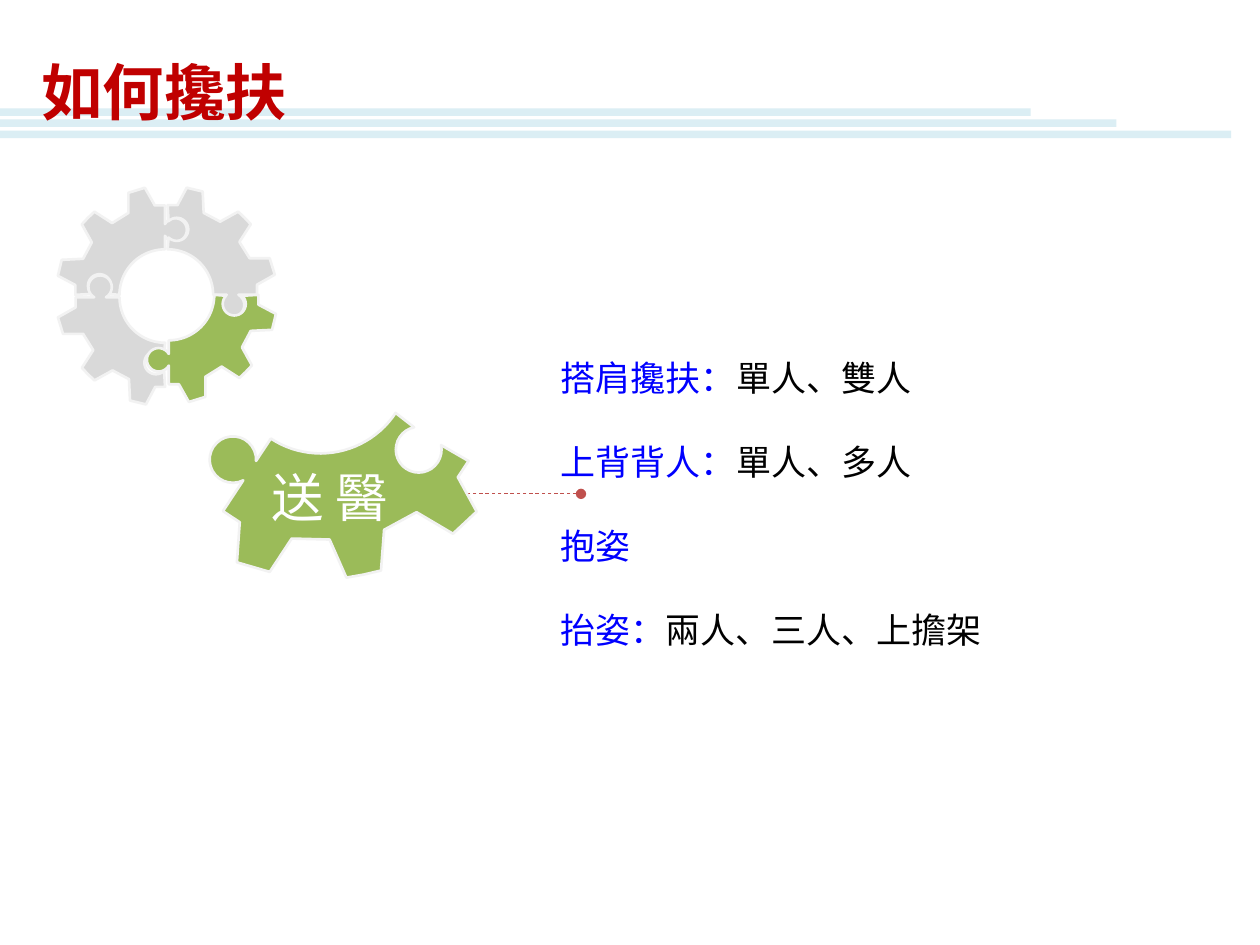
from math import cos, sin, radians
from lxml.etree import SubElement
from pptx import Presentation
from pptx.dml.color import RGBColor
from pptx.enum.dml import MSO_LINE
from pptx.enum.shapes import MSO_CONNECTOR, MSO_SHAPE
from pptx.enum.text import MSO_ANCHOR, MSO_AUTO_SIZE, PP_ALIGN
from pptx.oxml.ns import qn
from pptx.util import Pt

FONT = "Noto Sans CJK SC"
COLORS = {name: RGBColor.from_string(value) for name, value in {
    "gray": "D9D9D9", "green": "9BBB59", "edge": "F2F2F2", "bar": "DBEEF4",
    "link": "C0504D", "title": "C00000", "term": "0000FF", "text": "000000",
    "label": "FFFFFF",
}.items()}

prs = Presentation()
prs.slide_width, prs.slide_height = Pt(720), Pt(540)
s = prs.slides.add_slide(prs.slide_layouts[1])


def arc(cx, cy, radius, start, end, steps=24):
    angles = [radians(start + (end - start) * i / steps) for i in range(steps + 1)]
    return [(cx + radius * cos(a), cy + radius * sin(a)) for a in angles]


def write(sp, box, paragraphs, size, bold=False, align=PP_ALIGN.LEFT, inset=(0, 0), gap=0):
    """Fill a text shape; each paragraph is a list of (text, color name)."""
    sp.left, sp.top, sp.width, sp.height = (Pt(v) for v in box)
    tf = sp.text_frame
    tf.word_wrap, tf.auto_size = True, MSO_AUTO_SIZE.NONE
    tf.vertical_anchor = MSO_ANCHOR.TOP
    tf.margin_left = tf.margin_right = Pt(inset[0])
    tf.margin_top = tf.margin_bottom = Pt(inset[1])
    for i, parts in enumerate(paragraphs):
        p = tf.paragraphs[0] if i == 0 else tf.add_paragraph()
        p.alignment, p.line_spacing = align, Pt(size * 1.3)
        p.space_before, p.space_after = Pt(0), Pt(gap)
        pPr = p._p.get_or_add_pPr()
        pPr.set("marL", "0")
        pPr.set("indent", "0")
        SubElement(pPr, qn("a:buNone"))
        for text, color in parts:
            r = p.add_run()
            r.text = text
            r.font.size, r.font.bold, r.font.name = Pt(size), bold, FONT
            r.font.color.rgb = COLORS[color]
            SubElement(r._r.get_or_add_rPr(), qn("a:ea")).set("typeface", FONT)


# Outline of a gear quarter around the gear centre: hub, socket, teeth, knob
quarter = (
    arc(0, 0, 26, 90, 0)
    + arc(37.4, 5.2, 6.6, 225, -45)
    + [(51.2, 0), (51.2, 5.6), (61.2, 10.9), (59, 20), (46.8, 20.6), (41.8, 30),
       (47.5, 40.3), (44, 44), (40.3, 47.5), (30.2, 41), (20.9, 46.8),
       (20.9, 58.3), (11.5, 61.2), (5.8, 51.1), (0, 51.1)]
    + arc(-5.8, 37.1, 6.7, 30, 330)
)

# Link from the large piece to the list
link = s.shapes.add_connector(MSO_CONNECTOR.STRAIGHT, Pt(332), Pt(282.2), Pt(208), Pt(282.2))
link.line.color.rgb, link.line.width = COLORS["link"], Pt(0.5)
link.line.dash_style = MSO_LINE.DASH
SubElement(link.line._get_or_add_ln(), qn("a:headEnd")).set("type", "oval")
SubElement(link._element.spPr, qn("a:effectLst"))

# Small gear in four quarter turns, then the enlarged piece
for x, y, turns, scale, rotation, color in [
    (94.3, 168.5, 2, 1, 0, "gray"),
    (95.8, 168.5, 3, 1, 0, "gray"),
    (94.3, 169.9, 1, 1, 0, "gray"),
    (96.5, 168.5, 0, 1, 0, "green"),
    (141.8, 224.2, 0, 1.98, 33.4, "green"),
]:
    points = quarter
    for _ in range(turns):
        points = [(-py, px) for px, py in points]
    points = [(Pt(x + px * scale), Pt(y + py * scale)) for px, py in points]
    builder = s.shapes.build_freeform(*points[0])
    builder.add_line_segments(points[1:], close=True)
    sp = builder.convert_to_shape()
    sp.shadow.inherit = False
    sp.rotation = rotation
    sp.fill.solid()
    sp.fill.fore_color.rgb = COLORS[color]
    sp.line.color.rgb, sp.line.width = COLORS["edge"], Pt(1.5)

# Label on the large piece
label = s.shapes.add_textbox(0, 0, 0, 0)
write(label, (134.6, 262.8, 108, 36), [[("送 醫", "label")]], 30, align=PP_ALIGN.CENTER)

# Title bars
for i, width in enumerate([589, 638, 703.5]):
    bar = s.shapes.add_shape(MSO_SHAPE.RECTANGLE, 0, Pt(61.9 + 6.4 * i), Pt(width), Pt(4.3))
    bar.shadow.inherit = False
    bar.fill.solid()
    bar.fill.fore_color.rgb = COLORS["bar"]
    bar.line.fill.background()

# Title, in front of the bars
title = s.shapes.title
write(title, (16.6, 23.8, 253.4, 49.7), [[("如何攙扶", "title")]], 35, bold=True, inset=(7.2, 3.6))
title.element.getparent().append(title.element)

# List of ways to help
write(s.placeholders[1], (320.4, 201.6, 258.5, 170), [
    [("搭肩攙扶：", "term"), ("單人、雙人", "text")],
    [("上背背人：", "term"), ("單人、多人", "text")],
    [("抱姿", "term")],
    [("抬姿：", "term"), ("兩人、三人、上擔架", "text")],
], 20, gap=22)

prs.save("out.pptx")
